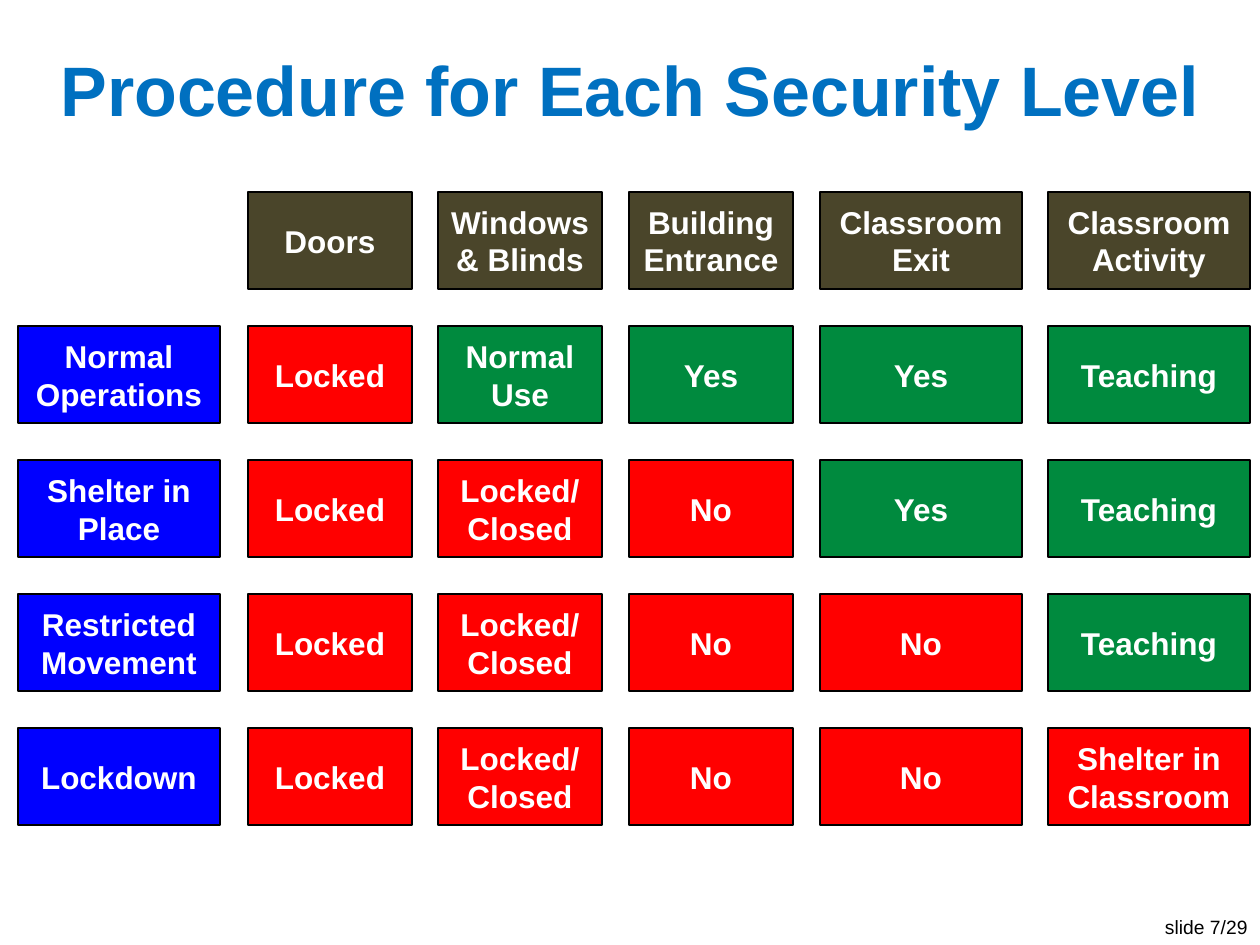
from dataclasses import dataclass

import pptx
import pptx.dml.color
import pptx.enum.shapes
import pptx.enum.text
import pptx.util

EMU_PER_PX = 914400 / 126
ALIGN = pptx.enum.text.PP_ALIGN


@dataclass(frozen=True)
class Theme:
    font: str = "Arial"
    title: str = "0070C0"
    text: str = "000000"
    line: str = "000000"
    label: str = "FFFFFF"
    header: str = "4A452A"
    level: str = "0000FF"
    stop: str = "FF0000"
    go: str = "008A3E"
    title_size: int = 40
    cell_size: int = 18
    footer_size: int = 11
    line_width: float = 0.75


THEME = Theme()

COLUMNS = [(18, 202), (248, 164), (438, 164), (629, 164), (820, 202), (1048, 202)]
TOP, ROW_PITCH, CELL_HEIGHT, CELL_INSET = 192, 134, 97, 8

HEADERS = ["Doors", "Windows\n& Blinds", "Building Entrance",
           "Classroom Exit", "Classroom Activity"]
LEVELS = [
    ("Normal Operations", ["Locked", "Normal\nUse", "Yes", "Yes", "Teaching"]),
    ("Shelter in Place", ["Locked", "Locked/\nClosed", "No", "Yes", "Teaching"]),
    ("Restricted Movement", ["Locked", "Locked/\nClosed", "No", "No", "Teaching"]),
    ("Lockdown", ["Locked", "Locked/\nClosed", "No", "No", "Shelter in Classroom"]),
]
OPEN_STATES = {"Normal\nUse", "Yes", "Teaching"}


def px(n):
    return pptx.util.Emu(round(n * EMU_PER_PX))


def rgb(value):
    return pptx.dml.color.RGBColor.from_string(value)


def write(tf, text, size, color, bold=True, align=ALIGN.CENTER):
    tf.word_wrap = True
    tf.vertical_anchor = pptx.enum.text.MSO_ANCHOR.MIDDLE
    tf.text = text
    for p in tf.paragraphs:
        p.alignment = align
        p.font.name = THEME.font
        p.font.size = pptx.util.Pt(size)
        p.font.bold = bold
        p.font.color.rgb = rgb(color)


def add_text(s, box, text, size, color, **style):
    sp = s.shapes.add_textbox(*map(px, box))
    write(sp.text_frame, text, size, color, **style)


def add_cell(s, column, row, text, fill):
    left, width = COLUMNS[column]
    box = (left, TOP + row * ROW_PITCH, width, CELL_HEIGHT)
    sp = s.shapes.add_shape(pptx.enum.shapes.MSO_SHAPE.RECTANGLE, *map(px, box))
    sp.shadow.inherit = False
    sp.fill.solid()
    sp.fill.fore_color.rgb = rgb(fill)
    sp.line.color.rgb = rgb(THEME.line)
    sp.line.width = pptx.util.Pt(THEME.line_width)
    tf = sp.text_frame
    tf.margin_left = tf.margin_right = px(CELL_INSET)
    write(tf, text, THEME.cell_size, THEME.label)


def add_matrix(s):
    for column, header in enumerate(HEADERS, 1):
        add_cell(s, column, 0, header, THEME.header)
    for row, (level, states) in enumerate(LEVELS, 1):
        add_cell(s, 0, row, level, THEME.level)
        for column, state in enumerate(states, 1):
            fill = THEME.go if state in OPEN_STATES else THEME.stop
            add_cell(s, column, row, state, fill)


def main():
    prs = pptx.Presentation()
    prs.slide_width, prs.slide_height = px(1260), px(945)
    s = prs.slides.add_slide(prs.slide_layouts[6])
    add_text(s, (25, 38, 1210, 101), "Procedure for Each Security Level",
             THEME.title_size, THEME.title)
    add_matrix(s)
    add_text(s, (1139, 909, 121, 36), "slide 7/29",
             THEME.footer_size, THEME.text, bold=False, align=ALIGN.RIGHT)
    prs.save("out.pptx")


if __name__ == "__main__":
    main()
